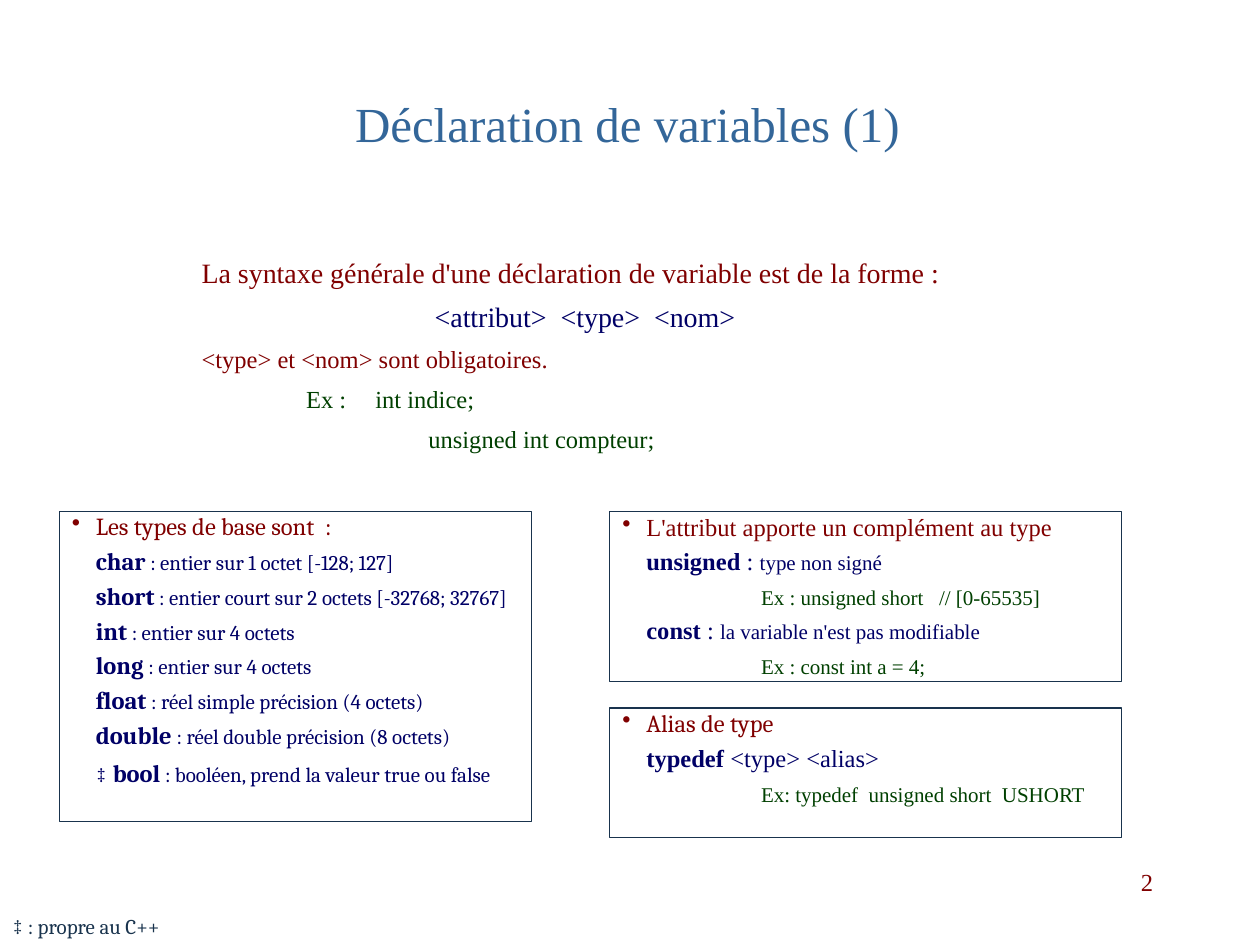
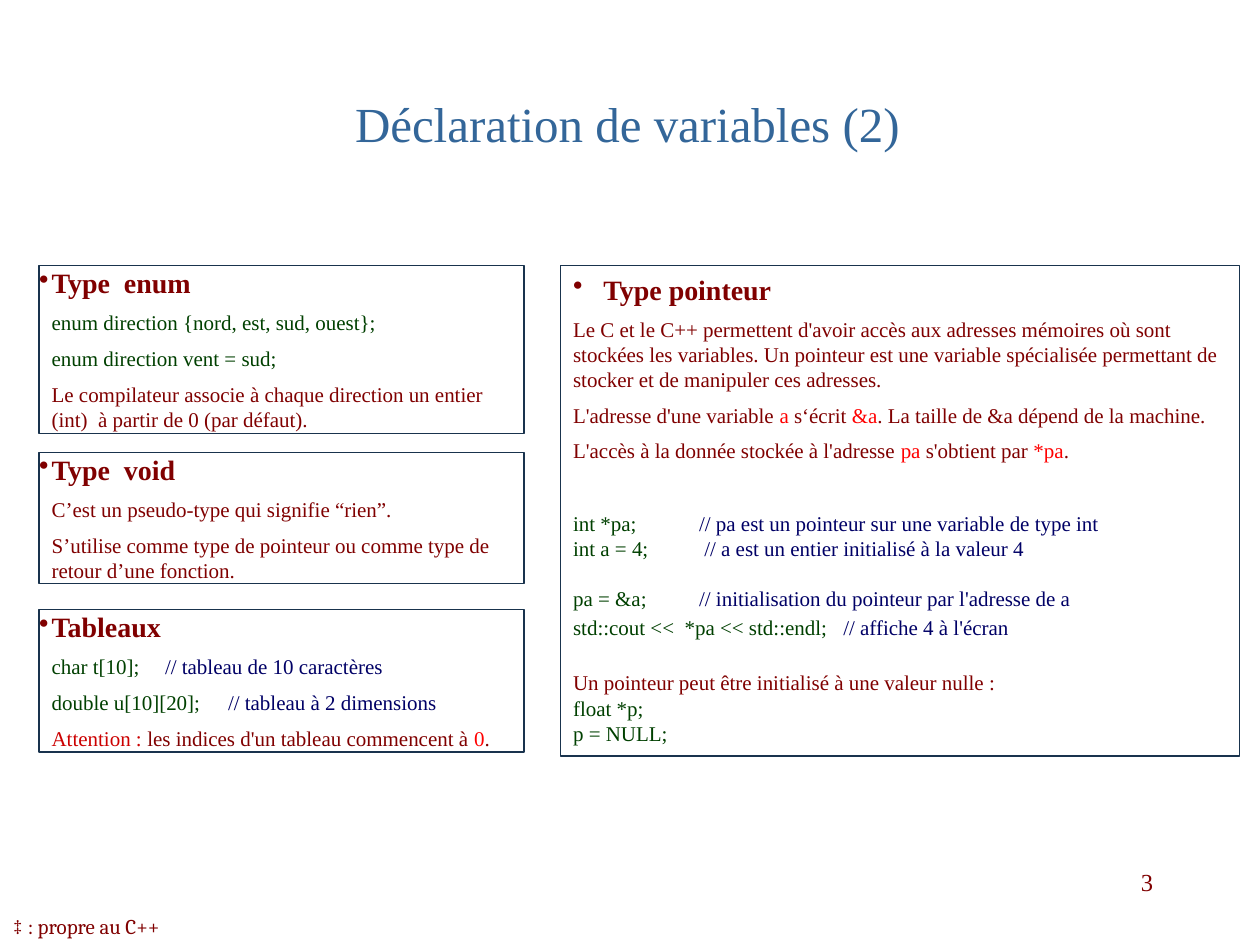
import dataclasses

import pptx
import pptx.dml.color
import pptx.enum.shapes
import pptx.enum.text
import pptx.util
from lxml import etree
from pptx.oxml.ns import qn

Inches = pptx.util.Inches
Pt = pptx.util.Pt
Align = pptx.enum.text.PP_ALIGN
Anchor = pptx.enum.text.MSO_ANCHOR


@dataclasses.dataclass(frozen=True)
class Theme:
    times: str = "Times New Roman"
    cambria: str = "Cambria"
    title: str = "336699"
    maroon: str = "800000"
    navy: str = "000066"
    green: str = "004000"
    ink: str = "19334D"
    red: str = "FF0000"
    warning: str = "CC0000"
    title_size: int = 28
    large: int = 16
    medium: int = 14
    small: int = 12


theme = Theme()

styles = {
    "title": (theme.title_size, theme.title, False),
    "lead": (theme.large, theme.maroon, False),
    "syntax": (theme.large, theme.navy, False),
    "heading": (theme.large, theme.maroon, True),
    "topic": (theme.medium, theme.maroon, False),
    "sample": (theme.medium, theme.green, False),
    "keyword": (theme.medium, theme.navy, True),
    "plain": (theme.medium, theme.navy, False),
    "wide": (theme.large, theme.navy, False),
    "detail": (theme.small, theme.navy, False),
    "code": (theme.small, theme.green, False),
    "text": (theme.small, theme.maroon, False),
    "symbol": (theme.small, theme.red, False),
    "warning": (theme.small, theme.warning, False),
    "note": (theme.small, theme.ink, False),
}

# margin, first-line indent, space before, space after, bullet, tab stop
layouts = {
    "flat": (0, 0, 0, 0, False, None),
    "lead": (0.12, 0, 0, 6, False, None),
    "syntax": (1.97, 0, 0, 6, False, None),
    "example": (0, 0.95, 0, 6, False, 1.59),
    "example more": (1.92, 0, 0, 6, False, None),
    "topic": (0.29, -0.19, 0, 3, True, None),
    "entry": (0.29, 0, 0, 3, False, None),
    "entry sample": (1.2, 0, 2.2, 3, False, None),
    "heading": (0.1, -0.1, 0, 6, True, None),
    "body": (0.1, 0, 0, 6, False, None),
    "commented": (0, 0.1, 0, 6, False, 1.86),
    "pointer heading": (0.24, -0.24, 0, 6, True, None),
    "pointer text": (0, 0, 0, 6, False, None),
    "pointer last": (0, 0, 0, 27, False, None),
    "pointer code": (0, 0, 0, 0, False, 2),
    "pointer address": (0, 0, 14.3, 0, False, 2),
    "pointer print": (0, 0, 2.2, 0, False, None),
    "pointer null": (0, 0, 17, 0, False, None),
}


def write_lines(box, lines, font=theme.times, align=Align.LEFT, anchor=Anchor.TOP,
                inset=(0, 0), wrap=True):
    frame = box.text_frame
    frame.word_wrap = wrap
    frame.vertical_anchor = anchor
    frame.margin_left = frame.margin_right = Inches(inset[0])
    frame.margin_top = frame.margin_bottom = Inches(inset[1])
    for index, (layout, *spans) in enumerate(lines):
        para = frame.add_paragraph() if index else frame.paragraphs[0]
        margin, indent, before, after, bullet, tab = layouts[layout]
        para.alignment = align
        para.space_before = Pt(before)
        para.space_after = Pt(after)
        properties = para._p.get_or_add_pPr()
        properties.set("marL", str(Inches(margin)))
        properties.set("indent", str(Inches(indent)))
        if bullet:
            colour = etree.SubElement(properties, qn("a:buClr"))
            etree.SubElement(colour, qn("a:srgbClr"), val=theme.maroon)
            etree.SubElement(properties, qn("a:buChar"), char="•")
        else:
            etree.SubElement(properties, qn("a:buNone"))
        if tab:
            stops = etree.SubElement(properties, qn("a:tabLst"))
            etree.SubElement(stops, qn("a:tab"), pos=str(Inches(tab)), algn="l")
        for style, text in spans:
            span = para.add_run()
            span.text = text
            size, colour, bold = styles[style]
            span.font.name = font
            span.font.size = Pt(size)
            span.font.bold = bold
            span.font.color.rgb = pptx.dml.color.RGBColor.from_string(colour)


def add_panel(page, place, lines, **options):
    panel = page.shapes.add_shape(pptx.enum.shapes.MSO_SHAPE.RECTANGLE, *map(Inches, place))
    panel.shadow.inherit = False
    panel.fill.background()
    panel.line.color.rgb = pptx.dml.color.RGBColor.from_string(theme.ink)
    panel.line.width = Pt(0.75)
    write_lines(panel, lines, **options)
    return panel


deck = pptx.Presentation()
deck.slide_width = Inches(10)
deck.slide_height = Inches(7.5)

pages = []
for part, note_style in enumerate(("note", "text"), start=1):
    page = deck.slides.add_slide(deck.slide_layouts[6])
    title = page.shapes.add_textbox(*map(Inches, (0.71, 0.35, 8.54, 1.25)))
    write_lines(title, [("flat", ("title", f"Déclaration de variables ({part})"))],
                align=Align.CENTER, anchor=Anchor.MIDDLE)
    note = page.shapes.add_textbox(*map(Inches, (0, 7.2, 1.4, 0.3)))
    write_lines(note, [("flat", (note_style, "‡ : propre au C++"))],
                font=theme.cambria, inset=(0.1, 0.05), wrap=False)
    number = page.shapes.add_textbox(*map(Inches, (7.17, 6.83, 2.08, 0.5)))
    write_lines(number, [("flat", ("topic", str(part + 1)))],
                align=Align.RIGHT, inset=(0.1, 0.05))
    pages.append(page)

basics, compounds = pages

syntax = basics.shapes.add_textbox(*map(Inches, (1.48, 2.03, 6.67, 1.57)))
write_lines(syntax, [
    ("lead", ("lead", "La syntaxe générale d'une déclaration de variable est de la forme :")),
    ("syntax", ("syntax", "<attribut>  <type>  <nom>")),
    ("lead", ("topic", "<type> et <nom> sont obligatoires.")),
    ("example", ("sample", "Ex :\tint indice;")),
    ("example more", ("sample", "unsigned int compteur;")),
])

base_types = [
    ("char", "entier sur 1 octet [-128; 127]"),
    ("short", "entier court sur 2 octets [-32768; 32767]"),
    ("int", "entier sur 4 octets"),
    ("long", "entier sur 4 octets"),
    ("float", "réel simple précision (4 octets)"),
    ("double", "réel double précision (8 octets)"),
]
type_lines = [("topic", ("topic", "Les types de base sont  :"))]
for name, meaning in base_types:
    type_lines.append(("entry", ("keyword", name), ("detail", f" : {meaning}")))
type_lines.append(("entry", ("detail", "‡"), ("wide", " "), ("keyword", "bool"),
                   ("detail", " : booléen, prend la valeur true ou false")))
add_panel(basics, (0.47, 4.06, 3.75, 2.46), type_lines, font=theme.cambria)

attribute_lines = [("topic", ("topic", "L'attribut apporte un complément au type"))]
for name, meaning, sample in (
    ("unsigned", "type non signé", "unsigned short   // [0-65535]"),
    ("const", "la variable n'est pas modifiable", "const int a = 4;"),
):
    attribute_lines += [
        ("entry", ("keyword", name), ("plain", " : "), ("detail", meaning)),
        ("entry sample", ("code", f"Ex : {sample}")),
    ]
add_panel(basics, (4.84, 4.06, 4.06, 1.35), attribute_lines)

alias = add_panel(basics, (4.84, 5.62, 4.06, 1.03), [
    ("topic", ("topic", "Alias de type")),
    ("entry", ("keyword", "typedef"), ("plain", " <type> <alias>")),
    ("entry sample", ("code", "Ex: typedef  unsigned short  USHORT")),
])
alias.text_frame.paragraphs[0].runs[0].font.name = theme.cambria

left_panels = [
    (2.11, 1.33, [
        ("heading", ("heading", "Type  enum")),
        ("body", ("code", "enum direction {nord, est, sud, ouest};")),
        ("body", ("code", "enum direction vent = sud;")),
        ("body", ("text", "Le compilateur associe à chaque direction un entier (int)  "
                          "à partir de 0 (par défaut).")),
    ]),
    (3.59, 1.04, [
        ("heading", ("heading", "Type  void")),
        ("body", ("text", "C’est un pseudo-type qui signifie “rien”.")),
        ("body", ("text", "S’utilise comme type de pointeur ou comme type de "
                          "retour d’une fonction.")),
    ]),
    (4.84, 1.13, [
        ("heading", ("heading", "Tableaux")),
        ("commented", ("code", "char t[10];"), ("detail", "\t// tableau de 10 caractères")),
        ("commented", ("code", "double u[10][20];"), ("detail", "\t// tableau à 2 dimensions")),
        ("body", ("warning", "Attention :"),
         ("text", " les indices d'un tableau commencent à "), ("symbol", "0"), ("text", ".")),
    ]),
]
for top, height, lines in left_panels:
    add_panel(compounds, (0.31, top, 3.85, height), lines)

add_panel(compounds, (4.45, 2.11, 5.39, 3.89), [
    ("pointer heading", ("heading", "Type pointeur")),
    ("pointer text", ("text", "Le C et le C++ permettent d'avoir accès aux adresses mémoires où "
                              "sont stockées les variables. Un pointeur est une variable "
                              "spécialisée permettant de stocker et de manipuler ces adresses.")),
    ("pointer text", ("text", "L'adresse d'une variable "), ("symbol", "a"),
     ("text", " s‘écrit "), ("symbol", "&a"),
     ("text", ". La taille de &a dépend de la machine.")),
    ("pointer last", ("text", "L'accès à la donnée stockée à l'adresse "), ("symbol", "pa"),
     ("text", " s'obtient par "), ("symbol", "*pa"), ("text", ".")),
    ("pointer code", ("code", "int *pa;\t"),
     ("detail", "// pa est un pointeur sur une variable de type int")),
    ("pointer code", ("code", "int a = 4;\t"),
     ("detail", " // a est un entier initialisé à la valeur 4")),
    ("pointer address", ("code", "pa = &a;\t"),
     ("detail", "// initialisation du pointeur par l'adresse de a")),
    ("pointer print", ("code", "std::cout <<  *pa << std::endl;   "),
     ("detail", "// affiche 4 à l'écran")),
    ("pointer null", ("text", "Un pointeur peut être initialisé à une valeur nulle :")),
    ("flat", ("code", "float *p;")),
    ("flat", ("code", "p = NULL;")),
], inset=(0.1, 0.05))

deck.save("out.pptx")
